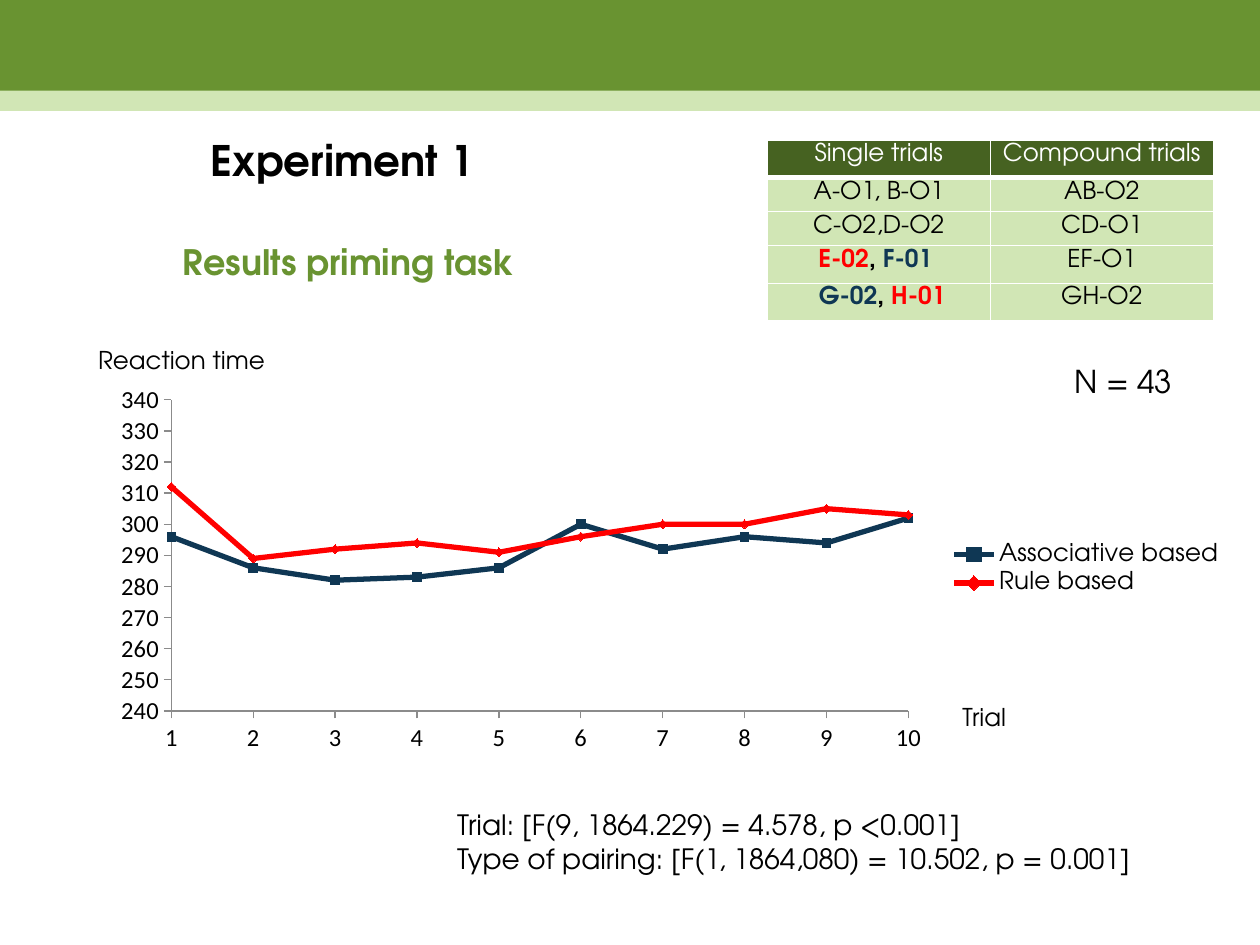
"""Build the Experiment 1 priming results slide."""
import dataclasses

import lxml.etree
import pptx
import pptx.chart.data
import pptx.dml.color
import pptx.enum.chart
import pptx.enum.shapes
import pptx.enum.text
import pptx.oxml
import pptx.oxml.ns
import pptx.util

Inches = pptx.util.Inches
Pt = pptx.util.Pt
Align = pptx.enum.text.PP_ALIGN
Anchor = pptx.enum.text.MSO_ANCHOR
qn = pptx.oxml.ns.qn


@dataclasses.dataclass(frozen=True)
class Theme:
    font: str = "TeX Gyre Adventor"
    axis_font: str = "Calibri"
    black: str = "000000"
    white: str = "FFFFFF"
    green: str = "699331"
    dark_green: str = "466221"
    pale_green: str = "D1E6B5"
    navy: str = "0F3754"
    red: str = "FF0000"
    axis_gray: str = "8B8B8B"
    title: int = 24
    subtitle: int = 20
    sample: int = 18
    statistics: int = 16
    small: int = 14


THEME = Theme()

TRIALS = [
    ("A-O1, B-O1", "AB-O2"),
    ("C-O2,D-O2", "CD-O1"),
    ([("E-02", THEME.red), (", ", THEME.black), ("F-01 ", THEME.navy)], "EF-O1"),
    ([(" ", THEME.black), ("G-02", THEME.navy), (", ", THEME.black), ("H-01", THEME.red)], "GH-O2"),
]
REACTION_TIMES = {
    "Associative based": [296, 286, 282, 283, 286, 300, 292, 296, 294, 302],
    "Rule based": [312, 289, 292, 294, 291, 296, 300, 300, 305, 303],
}


def rgb(color):
    return pptx.dml.color.RGBColor.from_string(color)


def style_font(font, size, color=THEME.black, name=THEME.font, bold=False):
    font.size, font.name, font.bold = Pt(size), name, bold
    font.color.rgb = rgb(color)


def write_text(frame, *lines, size=THEME.small, color=THEME.black, bold=False,
               align=Align.LEFT, anchor=None, spacing=None):
    """Write lines, each a string or a list of (text, color) runs."""
    frame.word_wrap = True
    if anchor is not None:
        frame.vertical_anchor = anchor
    for index, line in enumerate(lines):
        paragraph = frame.add_paragraph() if index else frame.paragraphs[0]
        paragraph.alignment = align
        if spacing:
            paragraph.line_spacing = spacing
        for text, run_color in [(line, color)] if isinstance(line, str) else line:
            run = paragraph.add_run()
            run.text = text
            style_font(run.font, size, run_color, bold=bold)


def add_text(slide, box, *lines, **text_format):
    shape = slide.shapes.add_textbox(*map(Inches, box))
    write_text(shape.text_frame, *lines, **text_format)


def add_rectangle(slide, box, color):
    shape = slide.shapes.add_shape(pptx.enum.shapes.MSO_SHAPE.RECTANGLE, *map(Inches, box))
    shape.shadow.inherit = False
    shape.fill.solid()
    shape.fill.fore_color.rgb = rgb(color)
    shape.line.fill.background()
    return shape


def place_title(slide, box, text):
    title = slide.shapes.title
    title.left, title.top, title.width, title.height = map(Inches, box)
    write_text(title.text_frame, text, size=THEME.title, bold=True,
               align=Align.CENTER, anchor=Anchor.MIDDLE, spacing=0.9)


def set_borders(cell, bottom):
    properties = cell._tc.get_or_add_tcPr()
    for side, width in (("L", 1), ("R", 1), ("T", 1), ("B", bottom)):
        line = lxml.etree.SubElement(properties, qn(f"a:ln{side}"), w=str(Pt(width)))
        fill = lxml.etree.SubElement(line, qn("a:solidFill"))
        lxml.etree.SubElement(fill, qn("a:srgbClr"), val=THEME.white)


def fill_cell(cell, content, header):
    cell.margin_left = cell.margin_right = Inches(0.06)
    cell.margin_top = cell.margin_bottom = 0
    set_borders(cell, bottom=3 if header else 1)
    cell.fill.solid()
    cell.fill.fore_color.rgb = rgb(THEME.dark_green if header else THEME.pale_green)
    write_text(cell.text_frame, content, color=THEME.white if header else THEME.black,
               bold=not isinstance(content, str), align=Align.CENTER, spacing=1.15)


def add_trial_table(slide, box):
    rows = [("Single trials", "Compound trials"), *TRIALS]
    table = slide.shapes.add_table(len(rows), 2, *map(Inches, box)).table
    for column in table.columns:
        column.width = Inches(box[2] / 2)
    for index, height in enumerate((0.3, 0.27, 0.27, 0.3, 0.3)):
        table.rows[index].height = Inches(height)
        for column, content in enumerate(rows[index]):
            fill_cell(table.cell(index, column), content, header=index == 0)


def style_axis(axis):
    axis.has_major_gridlines = False
    axis.major_tick_mark = pptx.enum.chart.XL_TICK_MARK.OUTSIDE
    axis.format.line.color.rgb = rgb(THEME.axis_gray)
    style_font(axis.tick_labels.font, THEME.small, name=THEME.axis_font)


def start_lines_on_axis(value_axis):
    """Put the first category on the value axis."""
    element = value_axis._element
    for old in element.findall(qn("c:crossBetween")):
        element.remove(old)
    between = lxml.etree.Element(qn("c:crossBetween"), val="midCat")
    element.find(qn("c:crosses")).addnext(between)


def set_plot_layout(chart, **fractions):
    """Fix the inner plot area as fractions of the chart."""
    plot_area = chart._chartSpace.chart.plotArea
    for old in plot_area.findall(qn("c:layout")):
        plot_area.remove(old)
    layout = lxml.etree.Element(qn("c:layout"))
    manual = lxml.etree.SubElement(layout, qn("c:manualLayout"))
    values = {"layoutTarget": "inner", "xMode": "edge", "yMode": "edge", **fractions}
    for tag, value in values.items():
        lxml.etree.SubElement(manual, qn(f"c:{tag}"), val=str(value))
    plot_area.insert(0, layout)


def style_series(series, color, marker):
    series.smooth = False
    series.format.line.color.rgb = rgb(color)
    series.format.line.width = Pt(3)
    series.marker.style = marker
    series.marker.size = 5
    series.marker.format.fill.solid()
    series.marker.format.fill.fore_color.rgb = rgb(color)
    series.marker.format.line.color.rgb = rgb(color)


def add_reaction_chart(slide, box):
    data = pptx.chart.data.CategoryChartData()
    data.categories = [str(trial) for trial in range(1, 11)]
    for name, values in REACTION_TIMES.items():
        data.add_series(name, values)
    chart = slide.shapes.add_chart(
        pptx.enum.chart.XL_CHART_TYPE.LINE_MARKERS, *map(Inches, box), data).chart
    chart.has_title = False
    style_font(chart.font, 10, name=THEME.axis_font)
    chart.plots[0].vary_by_categories = False
    style_axis(chart.category_axis)
    style_axis(chart.value_axis)
    chart.value_axis.minimum_scale, chart.value_axis.maximum_scale = 240, 340
    chart.value_axis.major_unit = 10
    start_lines_on_axis(chart.value_axis)
    chart.has_legend = True
    chart.legend.position = pptx.enum.chart.XL_LEGEND_POSITION.RIGHT
    chart.legend.include_in_layout = False
    style_font(chart.legend.font, THEME.small)
    set_plot_layout(chart, x=0.06, y=0.06, w=0.65, h=0.81)
    markers = pptx.enum.chart.XL_MARKER_STYLE
    looks = ((THEME.navy, markers.SQUARE), (THEME.red, markers.DIAMOND))
    for series, (color, marker) in zip(chart.plots[0].series, looks):
        style_series(series, color, marker)


def main():
    presentation = pptx.Presentation()
    presentation.slide_width, presentation.slide_height = Inches(10), Inches(7.5)
    slide = presentation.slides.add_slide(presentation.slide_layouts[5])
    sample = add_rectangle(slide, (8.36, 2.8, 1.11, 0.44), THEME.white)
    write_text(sample.text_frame, "N = 43", size=THEME.sample, align=Align.CENTER, anchor=Anchor.MIDDLE)
    add_text(slide, (3.53, 6.36, 5.69, 0.64), "Trial: [F(9, 1864.229) = 4.578, p <0.001]",
             "Type of pairing: [F(1, 1864,080) = 10.502, p = 0.001]", size=THEME.statistics)
    add_text(slide, (0.68, 2.69, 1.58, 0.34), "Reaction time")
    add_text(slide, (7.54, 5.52, 1.58, 0.34), "Trial")
    add_reaction_chart(slide, (0.82, 2.99, 9, 3.05))
    place_title(slide, (0, 0.51, 5.43, 1.57), "Experiment 1")
    add_rectangle(slide, (0, 0, 10, 0.87), THEME.green)
    add_rectangle(slide, (0, 0.72, 10, 0.16), THEME.pale_green)
    add_trial_table(slide, (6.09, 1.11, 3.54, 1.45))
    add_text(slide, (0.05, 1.75, 5.43, 0.69), "Results priming task", size=THEME.subtitle,
             color=THEME.green, bold=True, align=Align.CENTER, anchor=Anchor.MIDDLE, spacing=0.9)
    presentation.save("out.pptx")


if __name__ == "__main__":
    main()
